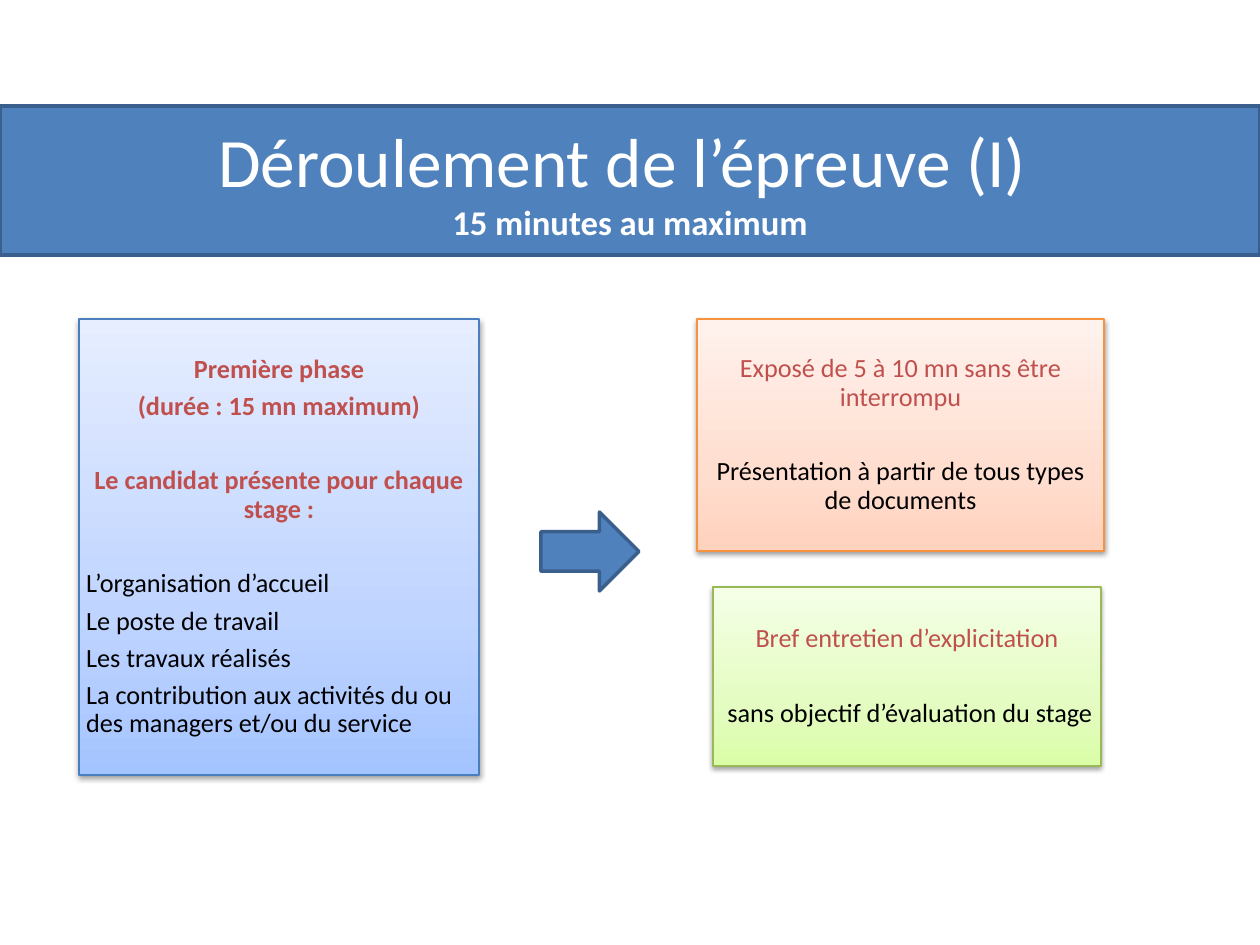
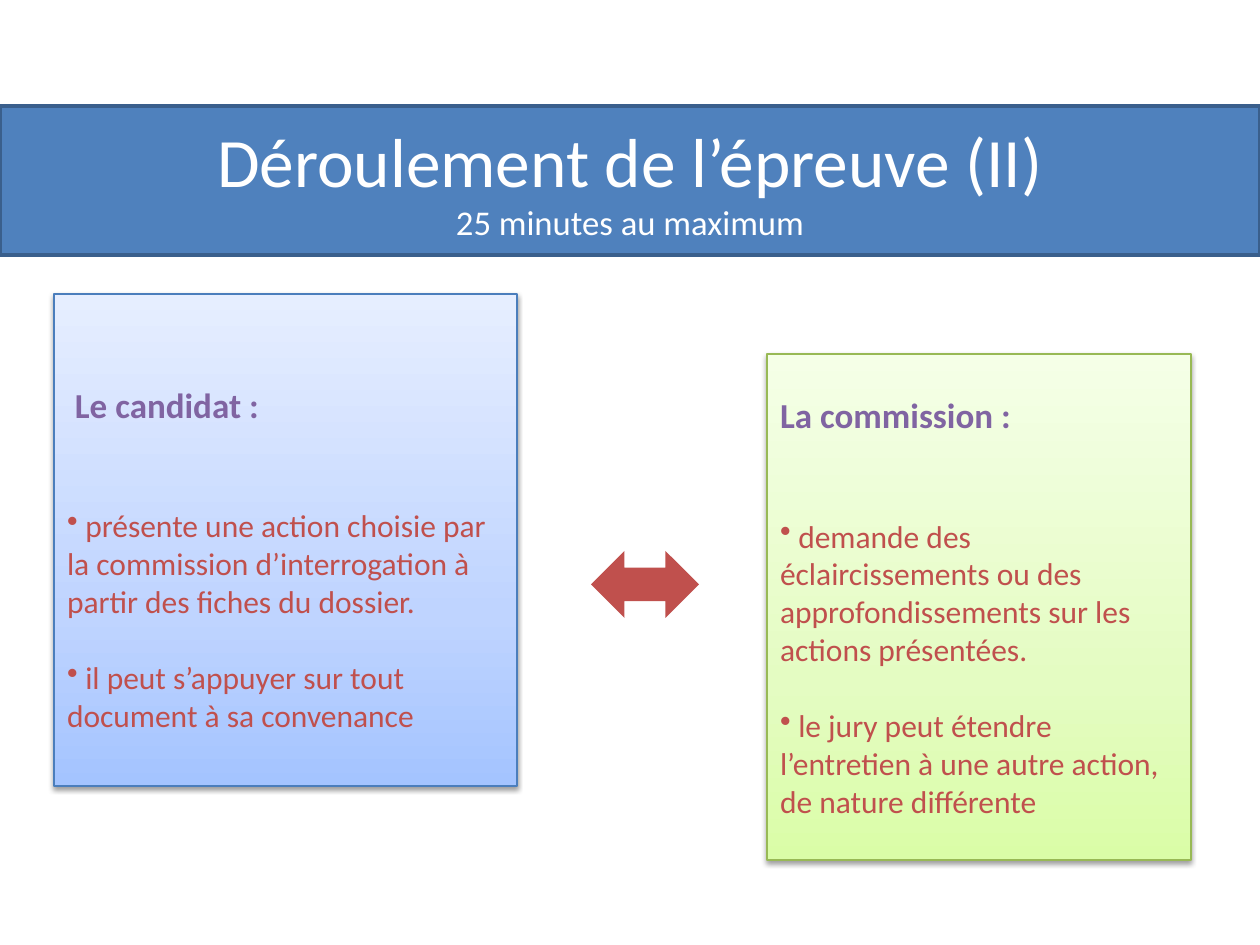
"""Build two slides on how the oral exam unfolds."""
from lxml import etree
from pptx import Presentation
from pptx.dml.color import RGBColor
from pptx.enum.shapes import MSO_SHAPE
from pptx.enum.text import MSO_ANCHOR, MSO_AUTO_SIZE, PP_ALIGN
from pptx.oxml import parse_xml
from pptx.oxml.ns import nsdecls, qn
from pptx.util import Emu, Pt

LEFT, CENTER = PP_ALIGN.LEFT, PP_ALIGN.CENTER
MIDDLE, NO_FIT = MSO_ANCHOR.MIDDLE, MSO_AUTO_SIZE.NONE
RECTANGLE = MSO_SHAPE.RECTANGLE
RIGHT_ARROW, DOUBLE_ARROW = MSO_SHAPE.RIGHT_ARROW, MSO_SHAPE.LEFT_RIGHT_ARROW

FONT = "Calibri"
PX_PER_INCH = 126
SLIDE_SIZE = (1260, 945)
BAND = (0, 106, 1260, 149)
COLORS = {
    "blue": "4F81BD", "navy": "3A5F8C", "red": "C0504D",
    "purple": "8064A2", "black": "000000", "white": "FFFFFF",
}
PANELS = {
    "blue": {"stops": ("A4C4FF", "BFD4FF", "E6EEFF"), "edge": "4B7EBC"},
    "orange": {"stops": ("FFD2BD", "FFDED0", "FFF2ED"), "edge": "F69240"},
    "green": {"stops": ("DAFDA7", "E4FCC2", "F5FFE7"), "edge": "98B955"},
}
STOP_POSITIONS = (0, 35, 100)

COMPACT = {"size": 15, "spacing": 0.9, "after": 5}
STYLES = {
    "phase": {**COMPACT, "color": "red", "bold": True, "align": CENTER},
    "step": {**COMPACT, "color": "red", "align": CENTER},
    "detail": {**COMPACT, "color": "black", "align": CENTER},
    "topic": {**COMPACT, "color": "black"},
    "role": {"size": 20, "color": "purple", "bold": True},
    "task": {"size": 18, "color": "red", "bullet": True},
}
PHASE_GAP, ROLE_GAP, TASK_GAP = 21.4, 46.4, 22
PHASE_INSETS, ROLE_INSETS, LOWERED_INSETS = (7, 7), (13, 6), (13, 44)

SLIDES = [
    {
        "title": "Déroulement de l’épreuve (I) ",
        "duration": "15 minutes au maximum",
        "bold_duration": True,
        "arrow": (RIGHT_ARROW, (541, 512, 98, 79), "blue", "navy"),
        "panels": [
            ("blue", (79, 319, 400, 456), PHASE_INSETS, [
                ("phase", "Première phase", 0),
                ("phase", "(durée : 15 mn maximum)", 0),
                ("phase", "Le candidat présente pour chaque stage :", PHASE_GAP),
                ("topic", "L’organisation d’accueil", PHASE_GAP),
                ("topic", "Le poste de travail", 0),
                ("topic", "Les travaux réalisés", 0),
                ("topic", "La contribution aux activités du ou des managers "
                          "et/ou du service", 0),
            ]),
            ("orange", (697, 319, 407, 232), PHASE_INSETS, [
                ("step", "Exposé de 5 à 10 mn sans être interrompu", 0),
                ("detail", "Présentation à partir de tous types de documents",
                 PHASE_GAP),
            ]),
            ("green", (713, 587, 388, 179), PHASE_INSETS, [
                ("step", "Bref entretien d’explicitation", 0),
                ("detail", " sans objectif d’évaluation du stage", PHASE_GAP),
            ]),
        ],
    },
    {
        "title": "Déroulement de l’épreuve (II)",
        "duration": "25 minutes au maximum",
        "bold_duration": False,
        "arrow": (DOUBLE_ARROW, (591, 551, 108, 67), "red", None),
        "panels": [
            ("blue", (54, 294, 463, 492), LOWERED_INSETS, [
                ("role", " Le candidat :", 0),
                ("task", " présente une action choisie par la commission "
                         "d’interrogation à partir des fiches du dossier.",
                 ROLE_GAP),
                ("task", " il peut s’appuyer sur tout document à sa convenance",
                 TASK_GAP),
            ]),
            ("green", (767, 354, 424, 506), ROLE_INSETS, [
                ("role", "La commission :", 0),
                ("task", " demande des éclaircissements ou des "
                         "approfondissements sur les actions présentées.",
                 ROLE_GAP),
                ("task", " le jury peut étendre l’entretien à une autre action, "
                         "de nature différente", TASK_GAP),
            ]),
        ],
    },
]


def px(length):
    """Turn pixels into EMU."""
    return Emu(round(length * 914400 / PX_PER_INCH))


def rgb(name):
    """Look up a named colour."""
    return RGBColor.from_string(COLORS[name])


def format_font(font, size, color, bold=False):
    """Set the face, size, colour and weight of a font."""
    font.name, font.size, font.bold = FONT, Pt(size), bold
    font.color.rgb = rgb(color)


def paint(shape, fill, edge):
    """Give a shape a plain fill and, if named, an outline."""
    shape.fill.solid()
    shape.fill.fore_color.rgb = rgb(fill)
    if edge:
        shape.line.color.rgb = rgb(edge)
        shape.line.width = Pt(2)
    else:
        shape.line.fill.background()


def add_title(slide, content):
    """Turn the title placeholder into the band with title and duration."""
    band = slide.shapes.title
    band.left, band.top, band.width, band.height = map(px, BAND)
    paint(band, "blue", "navy")
    frame = band.text_frame
    frame.text = content["title"] + "\v" + content["duration"]
    frame.auto_size, frame.vertical_anchor = NO_FIT, MIDDLE
    frame.paragraphs[0].alignment = CENTER
    heading, duration = frame.paragraphs[0].runs
    format_font(heading.font, 39.6, "white")
    format_font(duration.font, 19.8, "white", content["bold_duration"])


def add_arrow(slide, kind, box, fill, edge):
    """Draw the arrow that links the panels."""
    arrow = slide.shapes.add_shape(kind, *map(px, box))
    arrow.shadow.inherit = False
    paint(arrow, fill, edge)


def decorate_panel(panel, stops, edge):
    """Apply the vertical gradient, thin edge and soft shadow."""
    marks = "".join(
        f'<a:gs pos="{position * 1000}"><a:srgbClr val="{color}"/></a:gs>'
        for position, color in zip(STOP_POSITIONS, stops))
    properties = panel._element.spPr
    properties.append(parse_xml(
        f'<a:gradFill {nsdecls("a")} rotWithShape="1"><a:gsLst>{marks}</a:gsLst>'
        '<a:lin ang="16200000" scaled="0"/></a:gradFill>'))
    panel.line.color.rgb = RGBColor.from_string(edge)
    panel.line.width = Pt(0.75)
    panel.shadow.inherit = False
    properties.find(qn("a:effectLst")).append(parse_xml(
        f'<a:outerShdw {nsdecls("a")} blurRad="{Pt(3.1)}" dist="{Pt(1.6)}" '
        'dir="5400000" rotWithShape="0"><a:srgbClr val="000000">'
        '<a:alpha val="38000"/></a:srgbClr></a:outerShdw>'))


def write_line(paragraph, style, text, gap):
    """Write one paragraph in a named style."""
    look = STYLES[style]
    paragraph.text = text
    if look.get("bullet"):
        etree.SubElement(paragraph._p.get_or_add_pPr(), qn("a:buChar"), char="•")
    paragraph.alignment = look.get("align", LEFT)
    paragraph.line_spacing = look.get("spacing", 1.0)
    paragraph.space_after = Pt(look.get("after", 0))
    if gap:
        paragraph.space_before = Pt(gap)
    for run in paragraph.runs:
        format_font(run.font, look["size"], look["color"], look.get("bold", False))


def add_panel(slide, theme, box, insets, lines):
    """Draw a gradient panel with its lines of text."""
    panel = slide.shapes.add_shape(RECTANGLE, *map(px, box))
    decorate_panel(panel, **PANELS[theme])
    frame = panel.text_frame
    frame.word_wrap, frame.vertical_anchor = True, MIDDLE
    side, top = insets
    frame.margin_left = frame.margin_right = px(side)
    frame.margin_top, frame.margin_bottom = px(top), px(7)
    for index, line in enumerate(lines):
        paragraph = frame.add_paragraph() if index else frame.paragraphs[0]
        write_line(paragraph, *line)


def main():
    """Build and save the presentation."""
    deck = Presentation()
    deck.slide_width, deck.slide_height = map(px, SLIDE_SIZE)
    for content in SLIDES:
        slide = deck.slides.add_slide(deck.slide_layouts[5])
        add_title(slide, content)
        for panel in content["panels"]:
            add_panel(slide, *panel)
        add_arrow(slide, *content["arrow"])
    deck.save("out.pptx")


if __name__ == "__main__":
    main()
